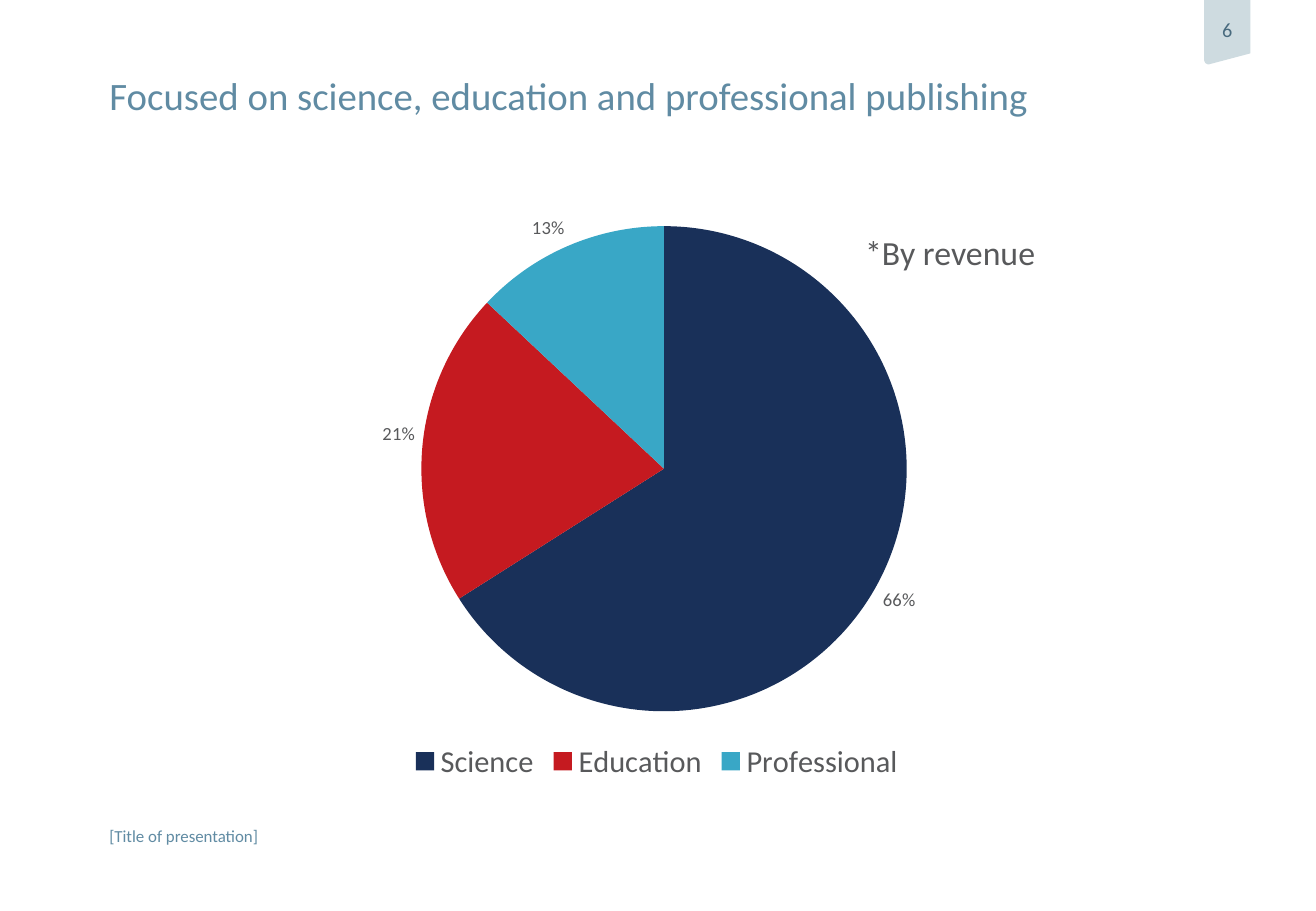
from pptx import Presentation
from pptx.chart.data import CategoryChartData
from pptx.dml.color import RGBColor
from pptx.enum.chart import XL_CHART_TYPE, XL_LABEL_POSITION, XL_LEGEND_POSITION
from pptx.enum.text import MSO_ANCHOR, PP_ALIGN
from pptx.util import Pt

PX = 9144
PIE = XL_CHART_TYPE.PIE
OUTSIDE = XL_LABEL_POSITION.OUTSIDE_END
BOTTOM = XL_LEGEND_POSITION.BOTTOM
TOP, MIDDLE = MSO_ANCHOR.TOP, MSO_ANCHOR.MIDDLE
LEFT, CENTER = PP_ALIGN.LEFT, PP_ALIGN.CENTER
STEEL, SLATE, MIST, GREY = "608BA3", "486A7E", "CEDBE0", "58595B"


def style_font(font, size, color):
    font.name = "Calibri"
    font.size = Pt(size)
    font.color.rgb = RGBColor.from_string(color)


def write(box, text, size, color, align=LEFT, anchor=TOP, margins=(0, 0, 0, 0), wrap=True):
    frame = box.text_frame
    frame.word_wrap = wrap
    frame.vertical_anchor = anchor
    (frame.margin_left, frame.margin_top,
     frame.margin_right, frame.margin_bottom) = [margin * PX for margin in margins]
    para = frame.paragraphs[0]
    para.alignment = align
    span = para.add_run()
    span.text = text
    style_font(span.font, size, color)


deck = Presentation()
deck.slide_width, deck.slide_height = 1083 * PX, 750 * PX
slide = deck.slides.add_slide(deck.slide_layouts[5])
shapes = slide.shapes

footer = shapes.add_textbox(90 * PX, 680 * PX, 384 * PX, 17 * PX)
write(footer, "[Title of presentation]", 10, STEEL, anchor=MIDDLE)

builder = shapes.build_freeform(991, 0, scale=PX)
builder.add_line_segments([(1029, 0), (1029, 44), (995, 53), (994, 53), (992, 52), (991, 50)])
page_tab = builder.convert_to_shape()
page_tab.shadow.inherit = False
page_tab.fill.solid()
page_tab.fill.fore_color.rgb = RGBColor.from_string(MIST)
page_tab.line.fill.background()
write(page_tab, "6", 12, SLATE, CENTER, MIDDLE, (0, 0, 0, 4), wrap=False)

title = shapes.title
title.left, title.top, title.width, title.height = 90 * PX, 59 * PX, 901 * PX, 41 * PX
write(title, "Focused on science, education and professional publishing", 23, STEEL)

revenue = CategoryChartData(number_format="0%")
revenue.categories = ["Science", "Education", "Professional"]
revenue.add_series("Series 1", (0.66, 0.21, 0.13))
chart = shapes.add_chart(PIE, 90 * PX, 156 * PX, 901 * PX, 491 * PX, revenue).chart
style_font(chart.font, 18, GREY)
chart.has_title = False
chart.has_legend = True
chart.legend.position = BOTTOM
chart.legend.include_in_layout = False
style_font(chart.legend.font, 18, GREY)

pie = chart.plots[0]
pie.vary_by_categories = True
for index, color in enumerate(["193059", "C51A20", "39A7C6"]):
    fill = pie.series[0].points[index].format.fill
    fill.solid()
    fill.fore_color.rgb = RGBColor.from_string(color)

labels = pie.series[0].data_labels
labels.show_value = True
labels.show_percentage = False
labels.position = OUTSIDE
labels.number_format = "0%"
labels.number_format_is_linked = False
style_font(labels.font, 11, GREY)

note = shapes.add_textbox(704 * PX, 183 * PX, 213 * PX, 50 * PX)
write(note, "*By revenue", 20, GREY, margins=(8, 8, 8, 8))

deck.save("out.pptx")
